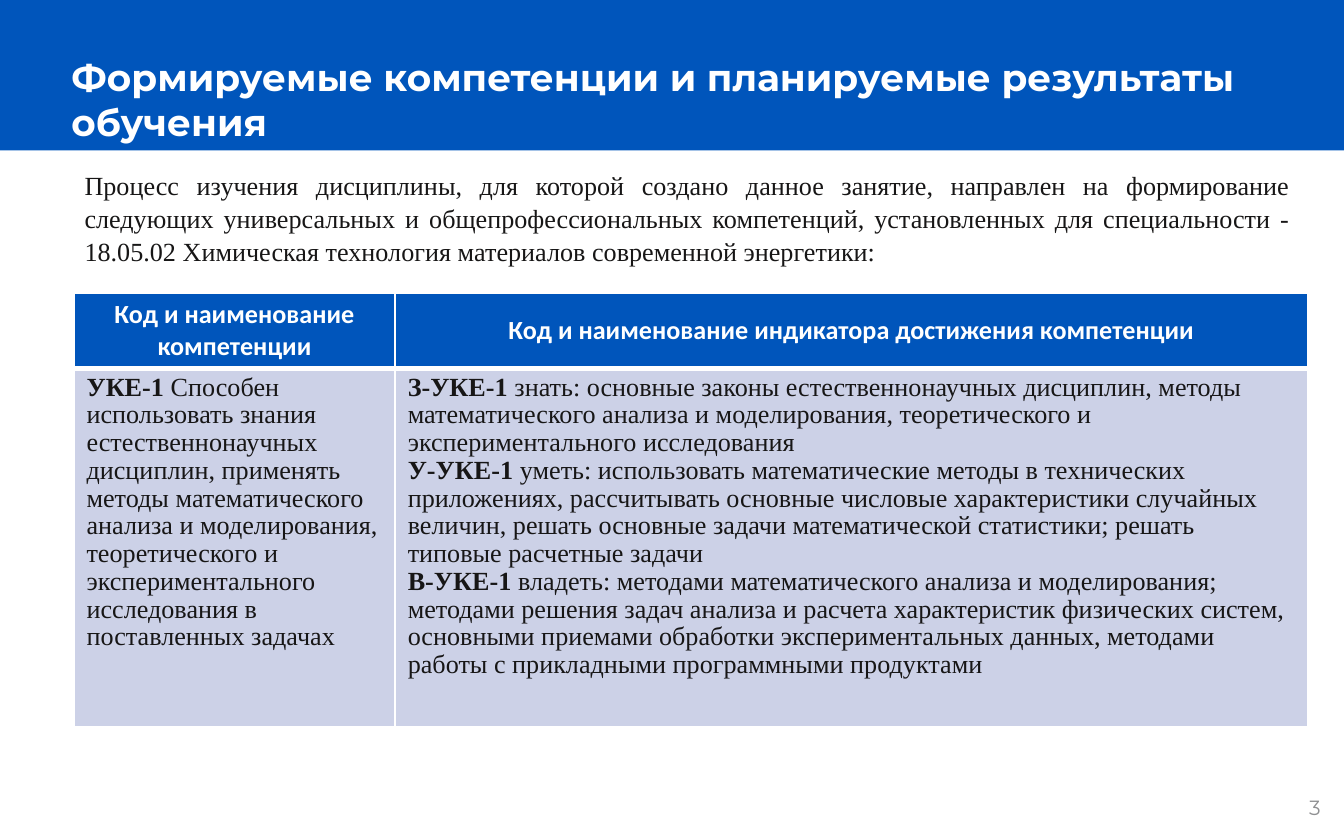
from typing import NamedTuple

from lxml.etree import SubElement
from pptx import Presentation
from pptx.dml.color import RGBColor
from pptx.enum.shapes import MSO_SHAPE
from pptx.enum.text import MSO_ANCHOR, PP_ALIGN
from pptx.oxml.ns import qn
from pptx.util import Pt

BLUE, WHITE, INK, PALE, GREY = "0055BB", "FFFFFF", "171616", "CCD1E7", "8F9092"
SERIF = "Times New Roman"


class Style(NamedTuple):
    font: str
    size: float
    color: str
    bold: bool = False
    align: PP_ALIGN = PP_ALIGN.LEFT
    spacing: float = 1.0


class Box(NamedTuple):
    left: float
    top: float
    width: float
    height: float
    text: str
    style: Style
    margins: tuple[float, float]
    anchor: MSO_ANCHOR = MSO_ANCHOR.TOP
    wrap: bool = True


class Item(NamedTuple):
    code: str
    text: str


TITLE = Style("Montserrat", 20, WHITE, True)
INTRO = Style(SERIF, 14, INK, align=PP_ALIGN.JUSTIFY, spacing=1.05)
NUMBER = Style("Montserrat", 11, GREY, align=PP_ALIGN.RIGHT)
HEADER = Style("Calibri", 14, WHITE, True, PP_ALIGN.CENTER)
BODY = Style(SERIF, 14, INK, spacing=0.96)

BOXES = [
    Box(33.1, 25.9, 654.5, 54, "Формируемые компетенции и планируемые результаты обучения",
        TITLE, (5.2, 2.6), MSO_ANCHOR.MIDDLE),
    Box(38.2, 86.4, 660.2, 58.3,
        "Процесс изучения дисциплины, для которой создано данное занятие, направлен "
        "на формирование следующих универсальных и общепрофессиональных компетенций, "
        "установленных для специальности - 18.05.02 Химическая технология материалов "
        "современной энергетики:", INTRO, (7.2, 3.6)),
    Box(687.6, 423.4, 25.2, 18.7, "3", NUMBER, (5.2, 2.6), wrap=False),
]

HEADINGS = ["Код и наименование компетенции",
            "Код и наименование индикатора достижения компетенции"]
COMPETENCES = [
    [Item("УКЕ-1", "Способен использовать знания естественнонаучных дисциплин, применять "
          "методы математического анализа и моделирования, теоретического и "
          "экспериментального исследования в поставленных задачах")],
    [Item("З-УКЕ-1", "знать: основные законы естественнонаучных дисциплин, методы "
          "математического анализа и моделирования, теоретического и "
          "экспериментального исследования"),
     Item("У-УКЕ-1", "уметь: использовать математические методы в технических "
          "приложениях, рассчитывать основные числовые характеристики случайных "
          "величин, решать основные задачи математической статистики; решать "
          "типовые расчетные задачи"),
     Item("В-УКЕ-1", "владеть: методами математического анализа и моделирования; "
          "методами решения задач анализа и расчета характеристик физических систем, "
          "основными приемами обработки экспериментальных данных, методами работы "
          "с прикладными программными продуктами")],
]


def rgb(color: str) -> RGBColor:
    return RGBColor.from_string(color)


def format_paragraph(p, style: Style) -> None:
    p.alignment = style.align
    p.line_spacing = style.spacing
    for r in p.runs:
        r.font.name = style.font
        r.font.size = Pt(style.size)
        r.font.color.rgb = rgb(style.color)
        r.font.bold = style.bold


def add_text(s, box: Box) -> None:
    sp = s.shapes.add_textbox(Pt(box.left), Pt(box.top), Pt(box.width), Pt(box.height))
    tf = sp.text_frame
    tf.word_wrap = box.wrap
    tf.vertical_anchor = box.anchor
    tf.margin_left = tf.margin_right = Pt(box.margins[0])
    tf.margin_top = tf.margin_bottom = Pt(box.margins[1])
    tf.text = box.text
    format_paragraph(tf.paragraphs[0], box.style)


def style_cell(cell, fill: str, top: float, bottom: float) -> None:
    cell.margin_left = cell.margin_right = Pt(6.8)
    cell.margin_top = cell.margin_bottom = Pt(3)
    # Borders come before the fill in the cell properties
    tcPr = cell._tc.get_or_add_tcPr()
    for side, width in (("L", 1), ("R", 1), ("T", top), ("B", bottom)):
        ln = SubElement(tcPr, qn(f"a:ln{side}"), w=str(Pt(width)))
        SubElement(SubElement(ln, qn("a:solidFill")), qn("a:srgbClr"), val=WHITE)
    cell.fill.solid()
    cell.fill.fore_color.rgb = rgb(fill)


def add_competence_table(s) -> None:
    widths, heights = (172.1, 488.9), (40.4, 192.2)
    table = s.shapes.add_table(len(heights), len(widths), Pt(39.6), Pt(157),
                               Pt(sum(widths)), Pt(sum(heights))).table
    for row, height in zip(table.rows, heights):
        row.height = Pt(height)
    for i, (width, heading, items) in enumerate(zip(widths, HEADINGS, COMPETENCES)):
        table.columns[i].width = Pt(width)
        head, body = table.cell(0, i), table.cell(1, i)
        style_cell(head, BLUE, 1, 3)
        style_cell(body, PALE, 3, 1)
        head.vertical_anchor = MSO_ANCHOR.MIDDLE
        head.text_frame.text = heading
        format_paragraph(head.text_frame.paragraphs[0], HEADER)
        tf = body.text_frame
        tf.text = "\n".join(item.code for item in items)
        for p, item in zip(tf.paragraphs, items):
            p.add_run().text = f" {item.text}"
            format_paragraph(p, BODY)
            p.runs[0].font.bold = True


def main() -> None:
    prs = Presentation()
    prs.slide_width, prs.slide_height = Pt(720), Pt(450)
    s = prs.slides.add_slide(prs.slide_layouts[6])

    # Title band
    band = s.shapes.add_shape(MSO_SHAPE.RECTANGLE, 0, 0, Pt(720), Pt(80.6))
    band.shadow.inherit = False
    band.fill.solid()
    band.fill.fore_color.rgb = rgb(BLUE)
    band.line.fill.background()

    # Title, introduction and page number
    for box in BOXES:
        add_text(s, box)

    # Competences and their indicators
    add_competence_table(s)
    prs.save("out.pptx")


if __name__ == "__main__":
    main()
